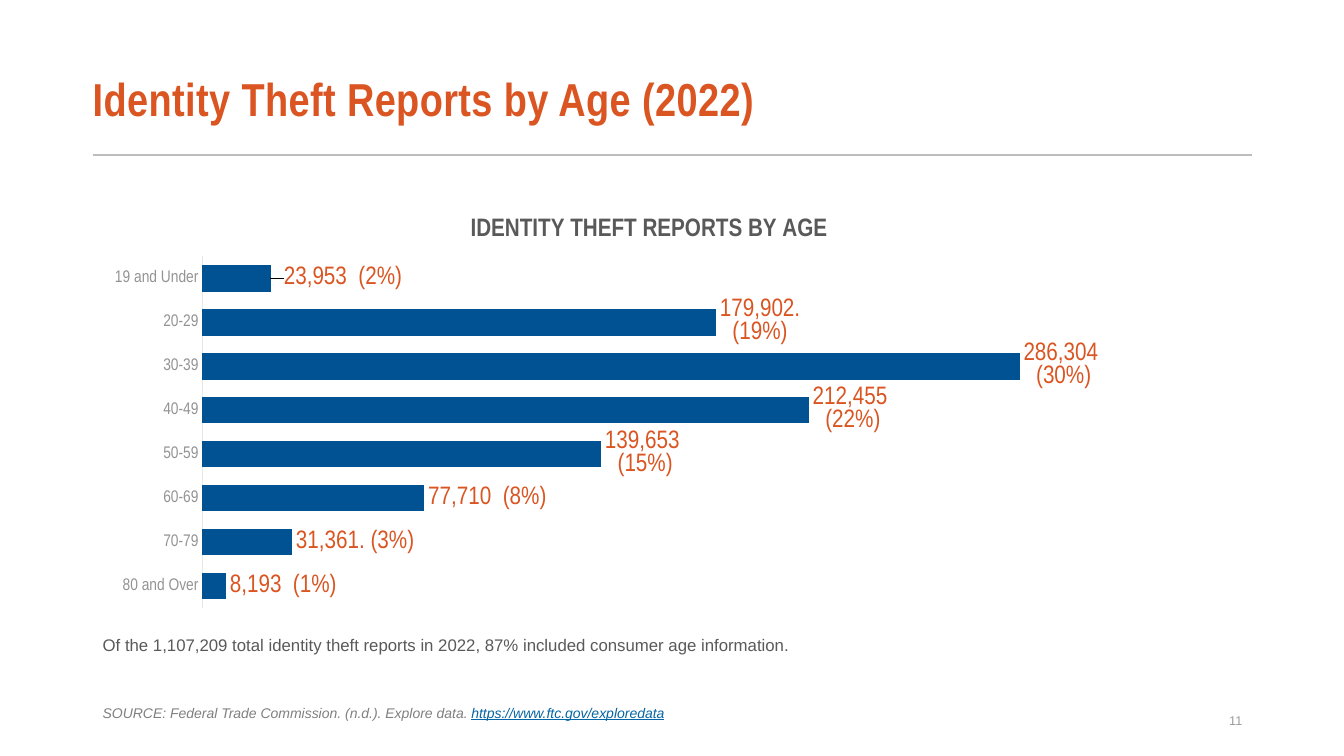
from dataclasses import dataclass

from lxml import etree
from pptx import Presentation
from pptx.chart import data
from pptx.dml import color
from pptx.enum import chart as charts, shapes, text
from pptx.oxml import ns
from pptx.util import Inches, Pt


@dataclass(frozen=True)
class Theme:
    sans: str = "Arial"
    slim: str = "Arial Narrow"
    rust: str = "DA5521"
    blue: str = "005293"
    link: str = "0665A4"
    dark: str = "595959"
    mid: str = "808080"
    pale: str = "939393"
    page: str = "9B9B9B"
    rule: str = "BDBDBD"
    axis: str = "E6E6E6"
    head: float = 33
    label: float = 18
    body: float = 12
    base: float = 10
    foot: float = 9


@dataclass(frozen=True)
class Age:
    name: str
    count: int
    label: str


@dataclass(frozen=True)
class Box:
    left: float
    top: float
    width: float
    height: float


THEME = Theme()
LEFT = 0.92
AGES = [
    Age("19 and Under", 23953, "23,953  (2%)"),
    Age("20-29", 179902, "179,902. (19%)"),
    Age("30-39", 286304, "286,304  (30%)"),
    Age("40-49", 212455, "212,455  (22%)"),
    Age("50-59", 139653, "139,653  (15%)"),
    Age("60-69", 77710, "77,710  (8%)"),
    Age("70-79", 31361, "31,361. (3%)"),
    Age("80 and Over", 8193, "8,193  (1%)"),
]


def tint(code: str) -> color.RGBColor:
    return color.RGBColor.from_string(code)


def style(font, size: float, shade: str, face: str = THEME.sans,
          bold: bool = False, slant: bool = False, under: bool = False) -> None:
    font.size = Pt(size)
    font.name = face
    font.color.rgb = tint(shade)
    font.bold = bold
    font.italic = slant
    font.underline = under


def write(para, words: str, **form):
    run = para.add_run()
    run.text = words
    style(run.font, **form)
    return run


def frame(slide, box: Box, inset: float = 0.1, middle: bool = False,
          grow: bool = False, pitch: float = 1.0):
    shape = slide.shapes.add_textbox(
        Inches(box.left), Inches(box.top), Inches(box.width), Inches(box.height))
    body = shape.text_frame
    body.word_wrap = True
    body.margin_left = Inches(inset)
    if middle:
        body.vertical_anchor = text.MSO_ANCHOR.MIDDLE
    if grow:
        body.auto_size = text.MSO_AUTO_SIZE.SHAPE_TO_FIT_TEXT
    para = body.paragraphs[0]
    para.line_spacing = pitch
    return para


def place(node, index: int, **parts) -> None:
    for old in node.xpath("c:layout"):
        node.remove(old)
    layout = etree.Element(ns.qn("c:layout"))
    manual = etree.SubElement(layout, ns.qn("c:manualLayout"))
    for name, value in parts.items():
        etree.SubElement(manual, ns.qn(f"c:{name}")).set("val", str(value))
    node.insert(index, layout)


def draw_rule(slide) -> None:
    line = slide.shapes.add_connector(
        shapes.MSO_CONNECTOR.STRAIGHT,
        Inches(LEFT), Inches(1.54), Inches(12.42), Inches(1.54))
    line.line.color.rgb = tint(THEME.rule)
    line.line.width = Pt(1.5)
    etree.SubElement(line._element.spPr, ns.qn("a:effectLst"))


def draw_chart(slide, box: Box) -> None:
    source = data.CategoryChartData(number_format="#,##0")
    source.categories = [age.name for age in AGES]
    source.add_series("Series 1", [age.count for age in AGES])
    chart = slide.shapes.add_chart(
        charts.XL_CHART_TYPE.BAR_CLUSTERED, Inches(box.left), Inches(box.top),
        Inches(box.width), Inches(box.height), source).chart
    style(chart.font, THEME.base, THEME.dark)
    chart.has_legend = False
    chart.has_title = True
    write(chart.chart_title.text_frame.paragraphs[0],
          "IDENTITY THEFT REPORTS BY AGE", size=THEME.label,
          shade=THEME.dark, face=THEME.slim, bold=True)

    names = chart.category_axis
    names.reverse_order = True
    names.has_major_gridlines = False
    names.major_tick_mark = charts.XL_TICK_MARK.NONE
    names.minor_tick_mark = charts.XL_TICK_MARK.NONE
    names.format.line.color.rgb = tint(THEME.axis)
    names.format.line.width = Pt(0.75)
    style(names.tick_labels.font, THEME.body, THEME.pale, THEME.slim)

    scale = chart.value_axis
    scale.minimum_scale = 0
    scale.maximum_scale = 350000
    scale.has_major_gridlines = False
    scale.visible = False

    plot = chart.plots[0]
    plot.gap_width = 64
    plot.vary_by_categories = False
    bars = plot.series[0]
    bars.format.fill.solid()
    bars.format.fill.fore_color.rgb = tint(THEME.blue)
    tags = bars.data_labels
    tags.show_value = True
    tags.number_format = "#,##0"
    tags.number_format_is_linked = False
    tags.position = charts.XL_LABEL_POSITION.OUTSIDE_END
    style(tags.font, THEME.label, THEME.rust, THEME.slim, bold=True)
    for index, age in enumerate(AGES):
        tag = bars.points[index].data_label
        write(tag.text_frame.paragraphs[0], age.label,
              size=THEME.label, shade=THEME.rust, face=THEME.slim)
        tag.position = charts.XL_LABEL_POSITION.OUTSIDE_END

    root = chart._chartSpace
    place(root.xpath(".//c:chart/c:title")[0], 1,
          xMode="edge", yMode="edge", x=0.33, y=0.04)
    place(root.xpath(".//c:plotArea")[0], 0, layoutTarget="inner",
          xMode="edge", yMode="edge", x=0.097, y=0.146, w=0.883, h=0.833)
    place(root.xpath(".//c:dLbl")[0], 1, x=0.008, y=0)


def main() -> None:
    deck = Presentation()
    deck.slide_width = Inches(13.33)
    deck.slide_height = Inches(7.5)
    slide = deck.slides.add_slide(deck.slide_layouts[6])

    draw_rule(slide)
    title = frame(slide, Box(LEFT, 0.54, 11.5, 0.94), inset=0, middle=True, pitch=0.87)
    run = write(title, "Identity Theft Reports by Age (2022)", size=THEME.head,
                shade=THEME.rust, face=THEME.slim, bold=True)
    run.font._element.set("spc", "30")

    page = frame(slide, Box(9.42, 6.95, 3, 0.4), middle=True)
    page.alignment = text.PP_ALIGN.RIGHT
    write(page, "11", size=THEME.foot, shade=THEME.page)

    draw_chart(slide, Box(LEFT, 1.93, 11.22, 4.19))

    note = frame(slide, Box(LEFT, 6.26, 11.04, 0.29), grow=True, pitch=0.95)
    write(note, "Of the 1,107,209 total identity theft reports in 2022, "
          "87% included consumer age information.", size=THEME.body, shade=THEME.dark)

    cite = frame(slide, Box(LEFT, 6.95, 11.04, 0.26), grow=True, pitch=0.95)
    write(cite, "SOURCE: Federal Trade Commission. (n.d.). Explore data. ",
          size=THEME.base, shade=THEME.mid, slant=True)
    write(cite, "https://www.ftc.gov/exploredata", size=THEME.base,
          shade=THEME.link, slant=True, under=True)

    deck.save("out.pptx")


if __name__ == "__main__":
    main()
